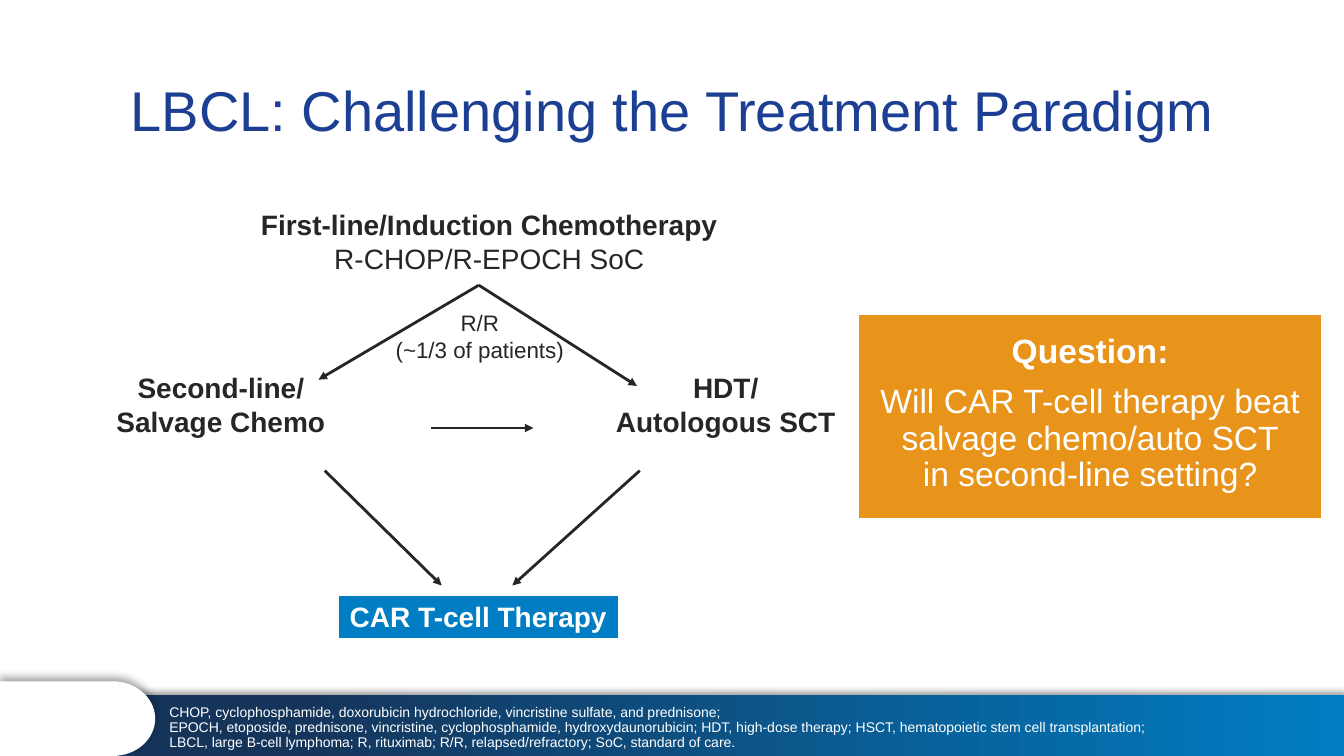
from math import cos, pi, sin

from lxml.etree import SubElement
from pptx import Presentation
from pptx.dml.color import RGBColor
from pptx.enum.shapes import MSO_CONNECTOR, MSO_SHAPE
from pptx.enum.text import MSO_ANCHOR, PP_ALIGN
from pptx.oxml.ns import qn
from pptx.util import Pt

INK, WHITE, NAVY = "262626", "FFFFFF", "1C3F93"
BLUE, DEEP, ORANGE = "007DC3", "15345A", "E8931A"


def color(code):
    return RGBColor.from_string(code)


def write(shape, lines, size, hue, bold=(), align=PP_ALIGN.CENTER,
          anchor=MSO_ANCHOR.TOP, wrap=True, space=1.0, gap=0):
    """Fill a shape with paragraphs; bold holds the indexes of bold ones."""
    frame = shape.text_frame
    frame.text = "\n".join(lines)
    frame.word_wrap = wrap
    frame.vertical_anchor = anchor
    for i, para in enumerate(frame.paragraphs):
        para.alignment = align
        para.line_spacing = space
        para.space_before = Pt(gap if i else 0)
        for run in para.runs:
            font = run.font
            font.name, font.size, font.bold = "Arial", Pt(size), i in bold
            font.color.rgb = color(hue)


def label(slide, box, lines, size, hue, **style):
    shape = slide.shapes.add_textbox(*map(Pt, box))
    write(shape, lines, size, hue, **style)


def block(slide, box, fill):
    shape = slide.shapes.add_shape(MSO_SHAPE.RECTANGLE, *map(Pt, box))
    shape.shadow.inherit = False
    shape.fill.solid()
    shape.fill.fore_color.rgb = color(fill)
    shape.line.color.rgb = color(WHITE)
    shape.line.width = Pt(1.5)
    return shape


def arrow(slide, start, end):
    link = slide.shapes.add_connector(
        MSO_CONNECTOR.STRAIGHT, *map(Pt, (*start, *end)))
    link.line.color.rgb = color(INK)
    link.line.width = Pt(2)
    SubElement(link.line._get_or_add_ln(), qn("a:tailEnd"), type="triangle")
    SubElement(link._element.spPr, qn("a:effectLst"))


def glow(shape, alpha, blur):
    """Cast a soft black shadow upward."""
    shape.shadow.inherit = False
    effects = shape._element.spPr.find(qn("a:effectLst"))
    outer = SubElement(effects, qn("a:outerShdw"), blurRad=str(Pt(blur)),
                       dist=str(Pt(3)), dir="16200000", algn="b",
                       rotWithShape="0")
    black = SubElement(outer, qn("a:srgbClr"), val="000000")
    SubElement(black, qn("a:alpha"), val=str(alpha * 1000))


def footer(slide, box):
    x, y, w, h = box
    band = slide.shapes.add_shape(
        MSO_SHAPE.RECTANGLE, *map(Pt, (x + 83.5, y + 10, w - 83.5, h - 10)))
    band.line.fill.background()
    band.fill.gradient()
    band.fill.gradient_angle = 180
    for stop, hue, place in zip(band.fill.gradient_stops,
                                (BLUE, DEEP), (0, 0.86)):
        stop.color.rgb = color(hue)
        stop.position = place
    glow(band, 40, 4)

    steps, mid, reach = 32, 80.6, 30.3
    turns = [pi * i / steps - pi / 2 for i in range(steps + 1)]
    curve = [(Pt(x + mid + reach * cos(t)), Pt(y + h / 2 * (1 + sin(t))))
             for t in turns]
    pen = slide.shapes.build_freeform(Pt(x), Pt(y))
    pen.add_line_segments([*curve, (Pt(x), Pt(y + h))], close=True)
    tab = pen.convert_to_shape()
    tab.fill.solid()
    tab.fill.fore_color.rgb = color(WHITE)
    tab.line.fill.background()
    glow(tab, 34, 6.1)

    label(slide, (x + 113.8, y + 10.8, 797.8, h - 10.8), [
        "CHOP, cyclophosphamide, doxorubicin hydrochloride, vincristine "
        "sulfate, and prednisone;",
        "EPOCH, etoposide, prednisone, vincristine, cyclophosphamide, "
        "hydroxydaunorubicin; HDT, high-dose therapy; HSCT, hematopoietic "
        "stem cell transplantation;",
        "LBCL, large B-cell lymphoma; R, rituximab; R/R, relapsed/refractory; "
        "SoC, standard of care.",
    ], 10, WHITE, align=PP_ALIGN.LEFT, anchor=MSO_ANCHOR.BOTTOM, space=0.9)


def title(slide, box):
    label(slide, box, ["LBCL: Challenging the Treatment Paradigm"], 40, NAVY,
          anchor=MSO_ANCHOR.MIDDLE, space=0.9)


def question(slide, box):
    shape = block(slide, box, ORANGE)
    frame = shape.text_frame
    frame.margin_left = frame.margin_right = frame.margin_top = Pt(14.4)
    frame.margin_bottom = Pt(7.2)
    write(shape, ["Question:", "Will CAR T-cell therapy beat salvage "
                  "chemo/auto SCT\vin second-line setting?"],
          24, WHITE, bold=(0,), space=0.9, gap=10)


def pathway(slide, box):
    x, y, w, h = box
    for start, end in [((276, 59), (161.5, 126.5)),
                       ((276, 59), (389, 131)),
                       ((166, 191.5), (249.5, 273.5)),
                       ((391, 191.5), (300, 273.5)),
                       ((242, 161), (315, 161))]:
        arrow(slide, (x + start[0], y + start[1]), (x + end[0], y + end[1]))
    for spot, lines, size, bold in [
            ((111.8, 0, 343.5, 80),
             ["First-line/Induction Chemotherapy", "R-CHOP/R-EPOCH SoC"],
             20, (0,)),
            ((0, 116.5, 183.6, 55.5),
             ["Second-line/", "Salvage Chemo"], 20, (0, 1)),
            ((w - 172.8, 116.5, 172.8, 55.5),
             ["HDT/", "Autologous SCT"], 20, (0, 1)),
            ((208.3, 72.5, 136.8, 46),
             ["R/R", "(~1/3 of patients)"], 16, ())]:
        left, top, *size_box = spot
        label(slide, (x + left, y + top, *size_box), lines, size, INK,
              bold=bold, wrap=False)
    goal = block(slide, (x + 175.2, y + h - 31.7, 200.9, 31.7), BLUE)
    write(goal, ["CAR T-cell Therapy"], 20, WHITE, bold=(0,), wrap=False)


def main():
    deck = Presentation()
    deck.slide_width, deck.slide_height = Pt(960), Pt(540)
    slide = deck.slides.add_slide(deck.slide_layouts[6])
    footer(slide, (0, 486.7, 960, 53.3))
    title(slide, (66, 28.8, 828, 104.4))
    question(slide, (612.7, 224.6, 331.9, 146.2))
    pathway(slide, (66, 144.7, 538.8, 311.8))
    deck.save("out.pptx")


if __name__ == "__main__":
    main()
